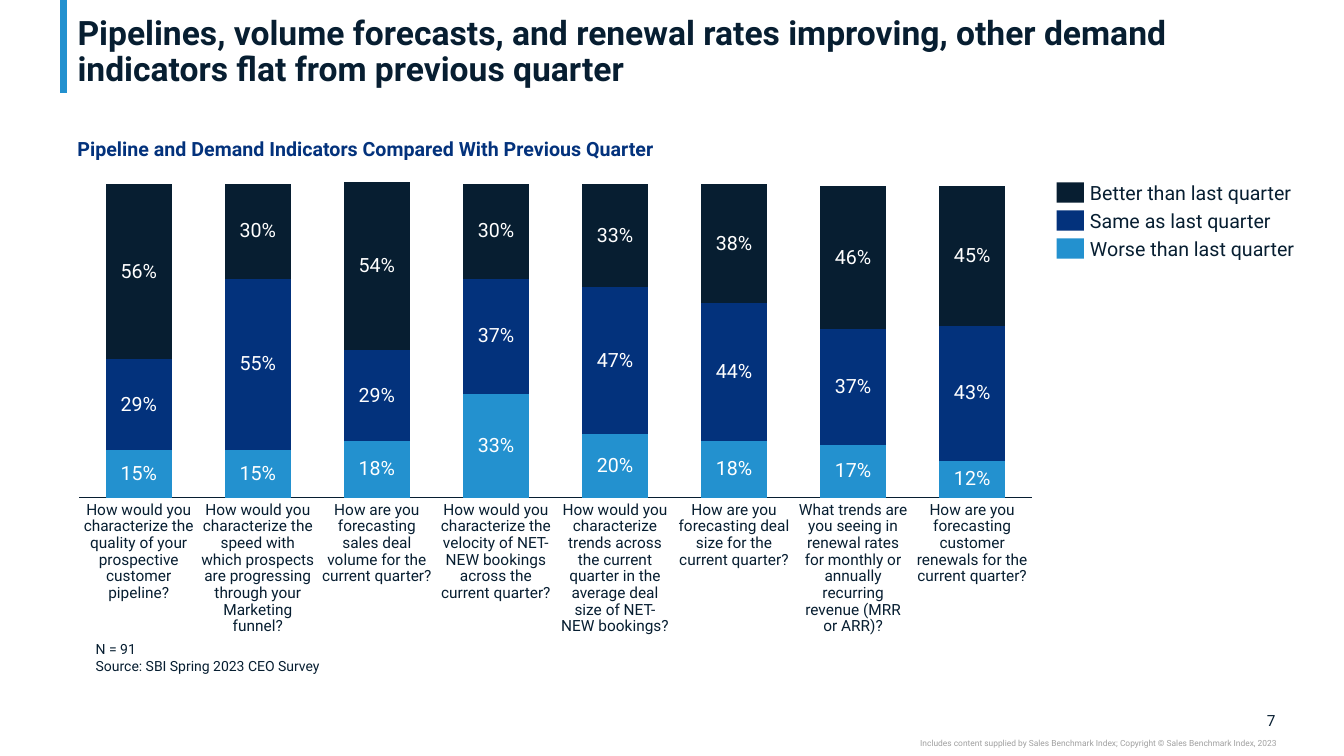
from lxml import etree
from pptx import Presentation
from pptx.chart.data import CategoryChartData
from pptx.dml.color import RGBColor
from pptx.enum.chart import XL_CHART_TYPE as ChartType, XL_TICK_LABEL_POSITION as TickLabels, XL_TICK_MARK as TickMark
from pptx.enum.shapes import MSO_CONNECTOR as Connector, MSO_SHAPE as Preset
from pptx.enum.text import MSO_ANCHOR as Anchor, PP_ALIGN as Align
from pptx.oxml.ns import qn
from pptx.util import Inches, Pt

INK, NAVY, SKY, GREY, WHITE = "071E31", "03327C", "2391CF", "A0A0A0", "FFFFFF"

deck = Presentation()
deck.slide_width, deck.slide_height = Inches(13.33), Inches(7.5)
slide = deck.slides.add_slide(deck.slide_layouts[6])
shapes = slide.shapes


def place(left, top, width, height):
    """Turn percentages of the slide's size into lengths."""
    across, down = deck.slide_width / 100, deck.slide_height / 100
    return int(left * across), int(top * down), int(width * across), int(height * down)


def add_text(lines, box, size, color=INK, bold=False, align=Align.LEFT,
             anchor=Anchor.TOP, spacing=1.0, inset=(0, 0)):
    frame = shapes.add_textbox(*place(*box)).text_frame
    side, end = (Inches(length) for length in inset)
    frame_format = {"word_wrap": True, "vertical_anchor": anchor, "margin_left": side,
                    "margin_right": side, "margin_top": end, "margin_bottom": end}
    for name, value in frame_format.items():
        setattr(frame, name, value)
    frame.text = lines
    for paragraph in frame.paragraphs:
        paragraph.alignment, paragraph.line_spacing = align, spacing
        for run in paragraph.runs:
            for name, value in {"name": "Roboto", "size": Pt(size), "bold": bold}.items():
                setattr(run.font, name, value)
            run.font.color.rgb = RGBColor.from_string(color)


# Heading and footer
x, y, _, length = place(4.73, 0, 0, 12.3)
accent = shapes.add_connector(Connector.STRAIGHT, x, y, x, length)
accent.line.color.rgb = RGBColor.from_string(SKY)
accent.line.width = Pt(5)
etree.SubElement(accent._element.spPr, qn("a:effectLst"))

add_text("Pipelines, volume forecasts, and renewal rates improving, other demand "
         "indicators flat from previous quarter", (5.03, 0.53, 89.95, 11.2), 24,
         bold=True, anchor=Anchor.BOTTOM, spacing=0.9, inset=(0.1, 0))
add_text("Pipeline and Demand Indicators Compared With Previous Quarter",
         (5.03, 17.47, 59.56, 4.53), 14, NAVY, bold=True, inset=(0.1, 0.05))
add_text("N = 91\nSource: SBI Spring 2023 CEO Survey",
         (6.38, 84.13, 49.44, 5.87), 10, inset=(0.1, 0.05))
add_text("7", (92.42, 94, 2.48, 2.53), 11, align=Align.RIGHT, anchor=Anchor.MIDDLE)
add_text("Includes content supplied by Sales Benchmark Index; Copyright © Sales Benchmark Index, 2023",
         (56.26, 97.6, 38.71, 1.33), 6, GREY, align=Align.RIGHT)

# Answers from the bottom of each column to the top: name, color, counts, shown shares
answers = [
    ("Worse than last quarter", SKY, (27, 27, 32, 59, 36, 32, 30, 21), (15, 15, 18, 33, 20, 18, 17, 12)),
    ("Same as last quarter", NAVY, (52, 98, 52, 66, 84, 79, 66, 77), (29, 55, 29, 37, 47, 44, 37, 43)),
    ("Better than last quarter", INK, (100, 54, 96, 54, 59, 68, 82, 80), (56, 30, 54, 30, 33, 38, 46, 45)),
]
questions = [
    "How would you characterize the quality of your prospective customer pipeline?",
    "How would you characterize the speed with which prospects are progressing through your Marketing funnel?",
    "How are you forecasting sales deal volume for the current quarter?",
    "How would you characterize the velocity of NET-NEW bookings across the current quarter?",
    "How would you characterize trends across the current quarter in the average deal size of NET-NEW bookings?",
    "How are you forecasting deal size for the current quarter?",
    "What trends are you seeing in renewal rates for monthly or annually recurring revenue (MRR or ARR)?",
    "How are you forecasting customer renewals for the current quarter?",
]

# Stacked columns
counts_data = CategoryChartData()
counts_data.categories = [str(number + 1) for number in range(len(questions))]
for name, _, counts, _ in answers:
    counts_data.add_series(name, counts)
chart_box = chart_left, chart_top, chart_width, chart_height = 5.25, 22.93, 72.24, 44.13
chart = shapes.add_chart(ChartType.COLUMN_STACKED, *place(*chart_box), counts_data).chart
chart.has_legend = chart.has_title = False
chart.font.name, chart.font.size = "Roboto", Pt(10)
chart.font.color.rgb = RGBColor.from_string(INK)

columns = chart.plots[0]
for name, value in {"gap_width": 80, "overlap": 100, "vary_by_categories": False}.items():
    setattr(columns, name, value)
for series, (_, color, _, _) in zip(columns.series, answers):
    series.format.fill.solid()
    series.format.fill.fore_color.rgb = RGBColor.from_string(color)

TOP_COUNT = 180
axis_formats = {
    chart.value_axis: {"visible": False, "has_major_gridlines": False,
                       "minimum_scale": 0, "maximum_scale": TOP_COUNT},
    chart.category_axis: {"tick_label_position": TickLabels.NONE, "has_major_gridlines": False,
                          "major_tick_mark": TickMark.NONE, "minor_tick_mark": TickMark.NONE},
}
for axis, axis_format in axis_formats.items():
    for name, value in axis_format.items():
        setattr(axis, name, value)
baseline = chart.category_axis.format.line
baseline.color.rgb = RGBColor.from_string(INK)
baseline.width = Pt(0.75)

plot = {"x": 0.009, "y": 0.027, "w": 0.981, "h": 0.945}
plot_area = chart._chartSpace.chart.plotArea
for automatic in plot_area.findall(qn("c:layout")):
    plot_area.remove(automatic)
layout = etree.Element(qn("c:layout"))
plot_area.insert(0, layout)
manual = etree.SubElement(layout, qn("c:manualLayout"))
settings = {"layoutTarget": "inner", "xMode": "edge", "yMode": "edge", **plot}
for tag, value in settings.items():
    etree.SubElement(manual, qn(f"c:{tag}")).set("val", str(value))

# Shares in the middle of each segment, questions below each column
pitch = chart_width * plot["w"] / len(questions)
plot_left = chart_left + chart_width * plot["x"]
plot_bottom = chart_top + chart_height * (plot["y"] + plot["h"])
count_height = chart_height * plot["h"] / TOP_COUNT
share_width, share_height, question_width = 5, 2.8, 8.4
for column, question in enumerate(questions):
    center = plot_left + pitch * (column + 0.5)
    stacked = 0
    for _, _, counts, shares in answers:
        middle = plot_bottom - count_height * (stacked + counts[column] / 2)
        add_text(f"{shares[column]}%",
                 (center - share_width / 2, middle - share_height / 2, share_width, share_height),
                 14, WHITE, align=Align.CENTER, anchor=Anchor.MIDDLE, spacing=0.9)
        stacked += counts[column]
    add_text(question, (center - question_width / 2, 66.4, question_width, 17.6), 11,
             align=Align.CENTER, spacing=0.9)

# Legend
for row, (name, color, _, _) in enumerate(reversed(answers)):
    top = 24.13 + 3.7 * row
    key = shapes.add_shape(Preset.RECTANGLE, *place(78.62, top, 2.03, 2.67))
    key.shadow.inherit = False
    key.fill.solid()
    key.fill.fore_color.rgb = RGBColor.from_string(color)
    key.line.fill.background()
    add_text(name, (81.1, top + 0.14, 17, 2.8), 14, anchor=Anchor.MIDDLE, spacing=0.9)

deck.save("out.pptx")
